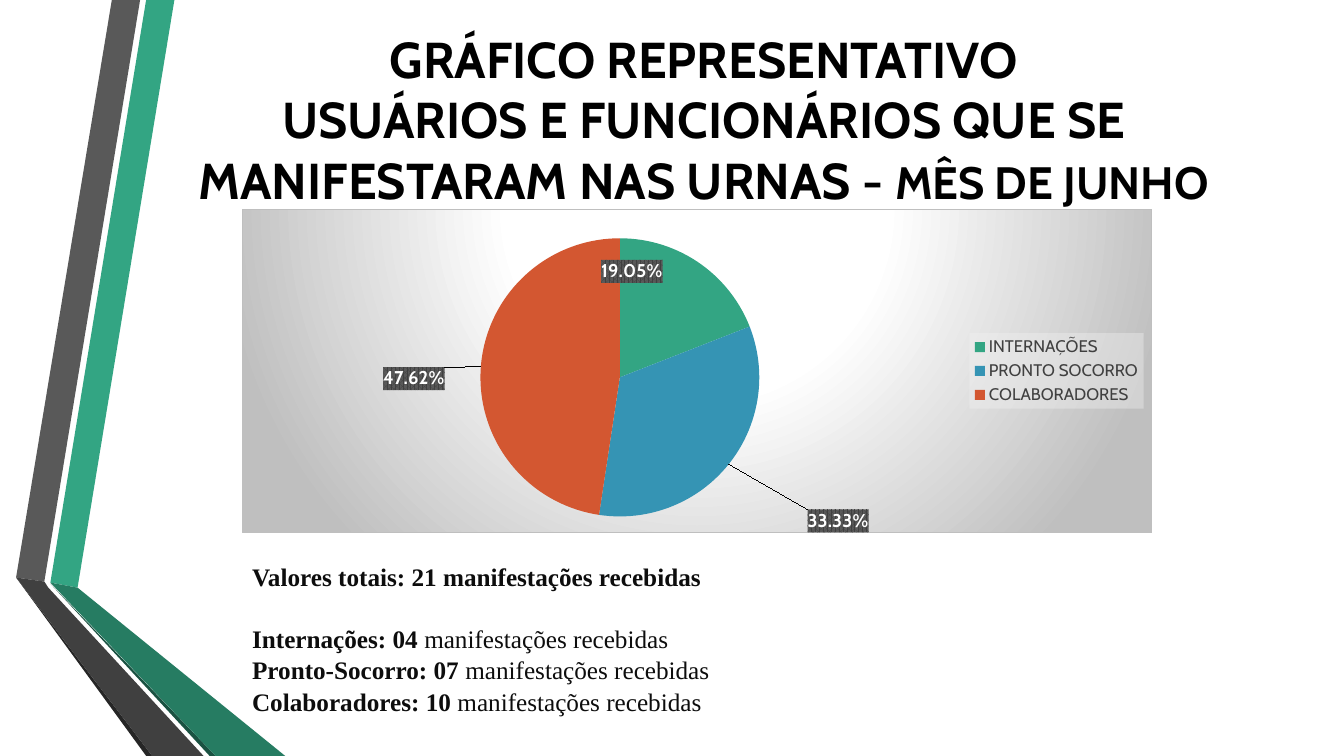
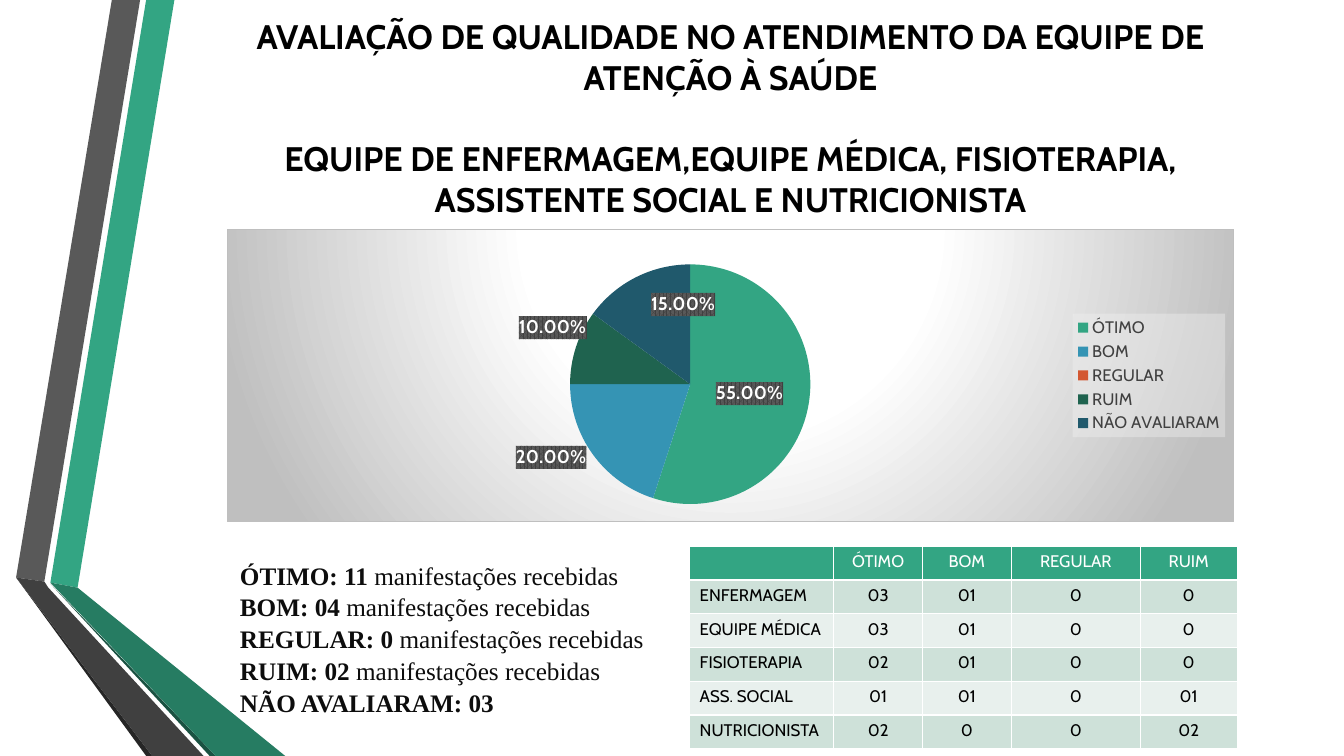
from copy import deepcopy

from pptx import Presentation
from pptx.chart.data import CategoryChartData
from pptx.dml.color import RGBColor
from pptx.enum.chart import XL_CHART_TYPE, XL_LABEL_POSITION, XL_LEGEND_POSITION
from pptx.enum.text import MSO_ANCHOR, MSO_AUTO_SIZE, PP_ALIGN
from pptx.oxml import parse_xml
from pptx.oxml.ns import nsdecls
from pptx.util import Inches, Pt

GREEN, BLACK, WHITE, INK, SILVER = "33A583", "000000", "FFFFFF", "0D0D0D", "BFBFBF"
SLICES = [GREEN, "3594B4", "D35731", "1F634F", "20596C"]
ROW_FILLS = ["E8F0ED", "CEE1D9"]
BANDS = [
    (GREEN, [(0.5, 5.78), (0.77, 5.83), (1.73, 0), (1.45, 0)]),
    ("595959", [(1.39, 0), (1.11, 0), (0.16, 5.73), (0.44, 5.77)]),
    ("262626", [(0.16, 5.73), (1.45, 7.5), (1.51, 7.5)]),
    ("1A5242", [(0.5, 5.79), (2.08, 7.5), (2.14, 7.5)]),
    ("267C62", [(0.5, 5.78), (2.14, 7.5), (2.83, 7.5), (0.77, 5.83)]),
    ("404040", [(2.02, 7.5), (0.48, 5.83), (0.44, 5.77), (0.16, 5.73), (1.51, 7.5)]),
]
HEADING, READING = "Cabin", "Times New Roman"
RECEIVED = "manifestações recebidas"


def color(value):
    return RGBColor.from_string(value)


def assign(target, values):
    for key, value in values.items():
        setattr(target, key, value)


def style_font(font, size, ink, bold=False, name=HEADING):
    assign(font, {"size": Pt(size), "bold": bold, "name": name})
    font.color.rgb = color(ink)


def solid(value, alpha=100):
    return (f'<a:solidFill><a:srgbClr val="{value}"><a:alpha val="{alpha * 1000}"/>'
            "</a:srgbClr></a:solidFill>")


def chart_fill(content):
    return parse_xml(f'<c:spPr {nsdecls("c", "a")}>{content}</c:spPr>')


def manual_layout(modes="", **fractions):
    values = "".join(f'<c:{key} val="{value}"/>' for key, value in fractions.items())
    return parse_xml(f'<c:layout {nsdecls("c")}><c:manualLayout>{modes}{values}'
                     "</c:manualLayout></c:layout>")


class Report:
    """Hold the report style and the slide being filled."""

    def __init__(self):
        self.deck = Presentation()
        assign(self.deck, {"slide_width": Inches(13.33), "slide_height": Inches(7.5)})
        self.slide = None

    def new_slide(self):
        self.slide = self.deck.slides.add_slide(self.deck.slide_layouts[1])
        for position, (fill, corners) in enumerate(BANDS, start=2):
            points = [(Inches(x), Inches(y)) for x, y in corners]
            outline = self.slide.shapes.build_freeform(*points[0])
            outline.add_line_segments(points[1:])
            band = outline.convert_to_shape()
            band.shadow.inherit = False
            band.fill.solid()
            band.fill.fore_color.rgb = color(fill)
            band.line.fill.background()
            self.slide.shapes.element.insert(position, band.element)

    def fill_text(self, holder, box, paragraphs, anchor, **spacing):
        """Fill a placeholder; each paragraph is a list of (text, font values)."""
        assign(holder, dict(zip(("left", "top", "width", "height"), map(Inches, box))))
        frame = holder.text_frame
        assign(frame, {"word_wrap": True, "auto_size": MSO_AUTO_SIZE.NONE,
                       "vertical_anchor": anchor})
        for index, runs in enumerate(paragraphs):
            paragraph = frame.add_paragraph() if index else frame.paragraphs[0]
            assign(paragraph, {"space_before": Pt(0), **spacing})
            for text, values in runs:
                run = paragraph.add_run()
                run.text = text
                style_font(run.font, **values)
        return frame.paragraphs

    def title(self, box, paragraphs, gap=0):
        lines = [[(text, {"size": size, "ink": BLACK, "bold": True}) for text, size in runs]
                 for runs in paragraphs]
        filled = self.fill_text(self.slide.shapes.title, box, lines, MSO_ANCHOR.MIDDLE,
                                alignment=PP_ALIGN.CENTER)
        filled[0].space_after = Pt(gap)

    def totals(self, box, entries, alignment, gap=0):
        reading = {"size": 18, "ink": INK, "name": READING}
        lines = [[(lead, {**reading, "bold": True}), (rest, reading)] if rest
                 else [(lead, {**reading, "bold": True})] for lead, rest in entries]
        filled = self.fill_text(self.slide.placeholders[1], box, lines, MSO_ANCHOR.TOP,
                                alignment=alignment, line_spacing=1.05)
        filled[0].space_after = Pt(gap)
        for paragraph in filled:
            properties = paragraph._p.get_or_add_pPr()
            for key in ("marL", "indent"):
                properties.set(key, "0")
            properties.append(parse_xml(f'<a:buNone {nsdecls("a")}/>'))

    def pie(self, box, shares, plot_area, label_shifts):
        """Draw a pie; a label shift of None hides that label."""
        data = CategoryChartData(number_format="0.00")
        data.categories = list(shares)
        data.add_series("Series 1", list(shares.values()))
        chart = self.slide.shapes.add_chart(
            XL_CHART_TYPE.PIE, *map(Inches, box), data).chart
        assign(chart, {"has_title": False, "has_legend": True})
        style_font(chart.font, 10, BLACK)
        assign(chart.legend, {"position": XL_LEGEND_POSITION.RIGHT,
                              "include_in_layout": False})
        style_font(chart.legend.font, 12, "404040")
        chart.plots[0].vary_by_categories = True
        series = chart.plots[0].series[0]
        for index, fill in enumerate(SLICES[:len(shares)]):
            slice_fill = series.points[index].format.fill
            slice_fill.solid()
            slice_fill.fore_color.rgb = color(fill)
        self.backgrounds(chart)
        area = chart.element.xpath("c:chart/c:plotArea")[0]
        for old in area.xpath("c:layout"):
            area.remove(old)
        modes = ('<c:layoutTarget val="inner"/><c:xMode val="edge"/>'
                 '<c:yMode val="edge"/>')
        area.insert(0, manual_layout(modes, **dict(zip("xywh", plot_area))))
        self.percentages(chart, series.data_labels, label_shifts)

    def backgrounds(self, chart):
        stops = "".join(f'<a:gs pos="{place * 1000}"><a:srgbClr val="{shade}"/></a:gs>'
                        for place, shade in [(0, WHITE), (39, WHITE), (100, SILVER)])
        backdrop = (f'<a:gradFill><a:gsLst>{stops}</a:gsLst><a:path path="circle">'
                    '<a:fillToRect l="50000" t="-80000" r="50000" b="180000"/></a:path>'
                    f'</a:gradFill><a:ln w="9525">{solid(SILVER)}</a:ln>')
        chart.element.xpath("c:txPr")[0].addprevious(chart_fill(backdrop))
        legend_text = chart.element.xpath("c:chart/c:legend/c:txPr")[0]
        legend_text.addprevious(chart_fill(solid("F2F2F2", 39)))

    def percentages(self, chart, labels, shifts):
        assign(labels, {"number_format": "0.00%", "number_format_is_linked": False,
                        "show_percentage": True, "show_value": False,
                        "position": XL_LABEL_POSITION.CENTER})
        style_font(labels.font, 13.3, WHITE, bold=True)
        group = chart.element.xpath("//c:ser/c:dLbls")[0]
        pattern = ('<a:pattFill prst="pct75"><a:fgClr><a:srgbClr val="404040"/></a:fgClr>'
                   '<a:bgClr><a:srgbClr val="595959"/></a:bgClr></a:pattFill>')
        group.xpath("c:numFmt")[0].addnext(chart_fill(pattern))
        shared = group.xpath("*[not(self::c:showLeaderLines)]")
        for index, shift in enumerate(shifts):
            label = parse_xml(f'<c:dLbl {nsdecls("c")}><c:idx val="{index}"/></c:dLbl>')
            if shift is None:
                label.append(parse_xml(f'<c:delete {nsdecls("c")} val="1"/>'))
            else:
                label.append(manual_layout(**dict(zip("xy", shift))))
                label.extend(deepcopy(part) for part in shared)
            group.insert(index, label)

    def table(self, box, widths, rows):
        grid = self.slide.shapes.add_table(len(rows), len(widths), *map(Inches, box)).table
        for column, width in zip(grid.columns, widths):
            column.width = Inches(width)
        for r, row in enumerate(rows):
            for c, text in enumerate(row):
                cell = grid.cell(r, c)
                cell.fill.solid()
                cell.fill.fore_color.rgb = color(ROW_FILLS[r % 2] if r else GREEN)
                cell.text = text
                paragraph = cell.text_frame.paragraphs[0]
                paragraph.alignment = PP_ALIGN.CENTER if c else PP_ALIGN.LEFT
                for font in [paragraph.font, *(run.font for run in paragraph.runs)]:
                    style_font(font, 12, BLACK if r else WHITE)


def main():
    report = Report()

    report.new_slide()
    report.title((1.22, 0.28, 11.52, 1.79), [
        [("GRÁFICO REPRESENTATIVO", 36)],
        [("USUÁRIOS E FUNCIONÁRIOS QUE SE MANIFESTARAM NAS URNAS - ", 36),
         ("MÊS DE JUNHO", 32.4)],
    ])
    report.pie((2.4, 2.07, 9.03, 3.22),
               {"INTERNAÇÕES": 19.05, "PRONTO SOCORRO": 33.33, "COLABORADORES": 47.62},
               (0.26, 0.09, 0.31, 0.86), [(-0.03, -0.15), (0.18, 0.31), (-0.15, 0.02)])
    report.totals((2.4, 5.5, 9.03, 1.62), [
        ("Valores totais: 21 manifestações recebidas", ""),
        ("Internações: 04 ", RECEIVED),
        ("Pronto-Socorro: 07 ", RECEIVED),
        ("Colaboradores: 10 ", RECEIVED),
    ], PP_ALIGN.JUSTIFY, gap=21.6)

    report.new_slide()
    report.title((1.79, 0.16, 10.91, 2.01), [
        [("AVALIAÇÃO DE QUALIDADE NO ATENDIMENTO DA EQUIPE DE ATENÇÃO À SAÚDE", 24.3)],
        [("EQUIPE DE ENFERMAGEM,EQUIPE MÉDICA, FISIOTERAPIA, "
          "ASSISTENTE SOCIAL E NUTRICIONISTA", 24.3)],
    ], gap=29)
    report.pie((2.25, 2.27, 9.99, 2.91),
               {"ÓTIMO": 55, "BOM": 20, "REGULAR": 0, "RUIM": 10, "NÃO AVALIARAM": 15},
               (0.34, 0.12, 0.24, 0.82),
               [(0, 0), (-0.09, 0.13), None, (-0.08, -0.13), (0.02, -0.09)])
    report.totals((2.28, 5.49, 4.56, 1.62), [
        ("ÓTIMO: 11 ", RECEIVED),
        ("BOM: 04 ", RECEIVED),
        ("REGULAR: 0 ", RECEIVED),
        ("RUIM: 02 ", RECEIVED),
        ("NÃO AVALIARAM: 03", ""),
    ], PP_ALIGN.LEFT)
    report.table((6.84, 5.42, 5.43, 2.01), [1.43, 0.88, 0.88, 1.28, 0.96], [
        ["", "ÓTIMO", "BOM", "REGULAR", "RUIM"],
        ["ENFERMAGEM", "03", "01", "0", "0"],
        ["EQUIPE MÉDICA", "03", "01", "0", "0"],
        ["FISIOTERAPIA", "02", "01", "0", "0"],
        ["ASS. SOCIAL", "01", "01", "0", "01"],
        ["NUTRICIONISTA", "02", "0", "0", "02"],
    ])

    report.deck.save("out.pptx")


if __name__ == "__main__":
    main()
